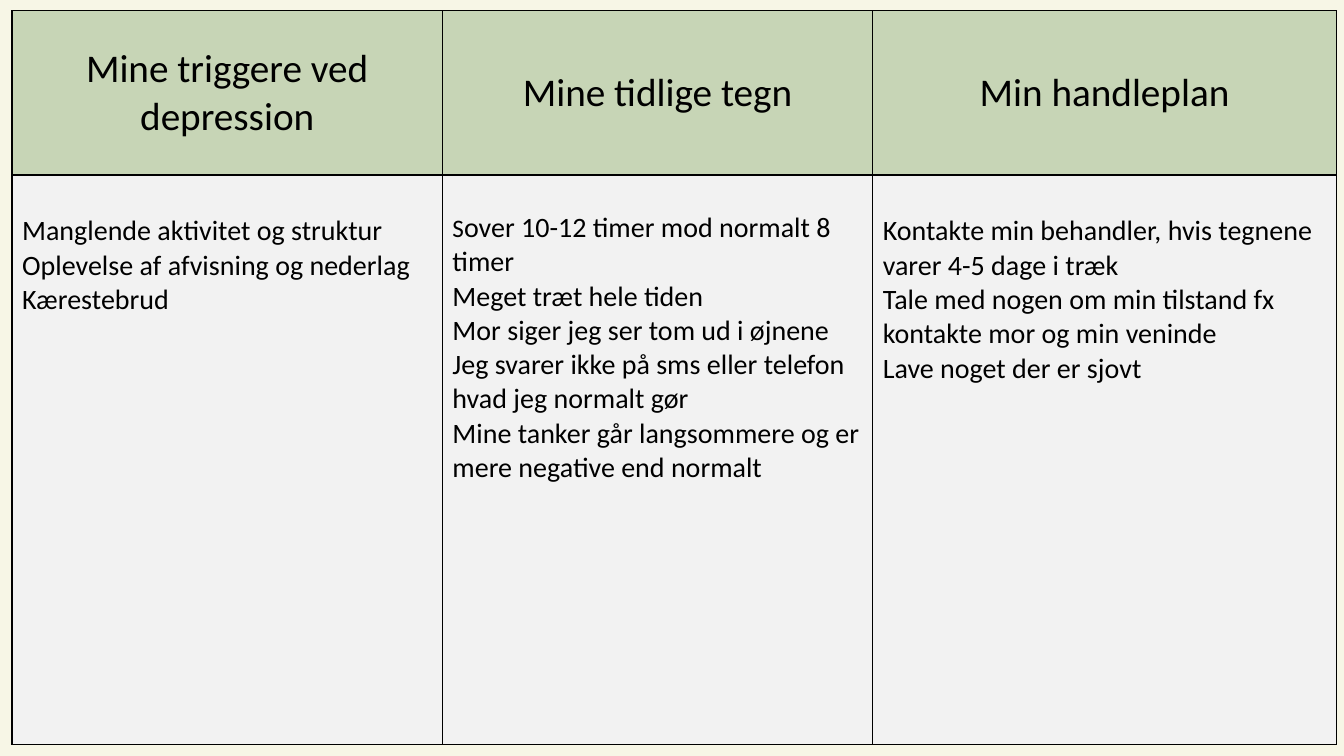
from lxml import etree
from pptx import Presentation
from pptx.dml.color import RGBColor
from pptx.enum.text import MSO_ANCHOR, PP_ALIGN
from pptx.oxml.ns import qn
from pptx.util import Pt

CREAM = RGBColor(0xF7, 0xF6, 0xE6)
GREEN = RGBColor(0xC7, 0xD5, 0xB6)
GRAY = RGBColor(0xF2, 0xF2, 0xF2)
BLACK = RGBColor(0, 0, 0)
TOP, MIDDLE = MSO_ANCHOR.TOP, MSO_ANCHOR.MIDDLE
LEFT, CENTER = PP_ALIGN.LEFT, PP_ALIGN.CENTER

WIDTHS = [307.4, 307.4, 331.2]
HEIGHTS = [117.4, 406.8]
HEADS = ["Mine triggere ved depression", "Mine tidlige tegn", "Min handleplan"]
# Each column: gap above the text, then its lines
PLANS = [
    (28, ["Manglende aktivitet og struktur",
          "Oplevelse af afvisning og nederlag",
          "Kærestebrud"]),
    (25.6, ["Sover 10-12 timer mod normalt 8 timer",
            "Meget træt hele tiden",
            "Mor siger jeg ser tom ud i øjnene",
            "Jeg svarer ikke på sms eller telefon hvad jeg normalt gør",
            "Mine tanker går langsommere og er mere negative end normalt"]),
    (28, ["Kontakte min behandler, hvis tegnene varer 4-5 dage i træk",
          "Tale med nogen om min tilstand fx kontakte mor og min veninde",
          "Lave noget der er sjovt"]),
]


class Sheet:
    font = "Calibri"
    ink = BLACK
    line = 1

    def __init__(self, deck, color):
        self.slide = deck.slides.add_slide(deck.slide_layouts[6])
        fill = self.slide.background.fill
        fill.solid()
        fill.fore_color.rgb = color

    def table(self, left, top, widths, heights):
        frame = self.slide.shapes.add_table(
            len(heights), len(widths), Pt(left), Pt(top),
            Pt(sum(widths)), Pt(sum(heights)))
        grid = frame.table
        grid.first_row = grid.horz_banding = False
        for col, width in zip(grid.columns, widths):
            col.width = Pt(width)
        for row, height in zip(grid.rows, heights):
            row.height = Pt(height)
        return grid

    def cell(self, cell, lines, size, color, align=LEFT, anchor=TOP, gap=3.6):
        self.border(cell)
        cell.fill.solid()
        cell.fill.fore_color.rgb = color
        cell.vertical_anchor = anchor
        cell.margin_top = Pt(gap)
        frame = cell.text_frame
        frame.text = "\n".join(lines)
        for par in frame.paragraphs:
            par.alignment = align
            par.font.name = self.font
            par.font.size = Pt(size)
            par.font.color.rgb = self.ink

    def border(self, cell):
        props = cell._tc.get_or_add_tcPr()
        for side in ("a:lnL", "a:lnR", "a:lnT", "a:lnB"):
            edge = etree.SubElement(props, qn(side), w=str(Pt(self.line)))
            fill = etree.SubElement(edge, qn("a:solidFill"))
            etree.SubElement(fill, qn("a:srgbClr"), val=str(self.ink))


def shrink_first(par, size):
    """Set the first letter of a paragraph in its own size."""
    head = par.runs[0]
    rest = par.add_run()
    rest.text = head.text[1:]
    head.text = head.text[:1]
    head.font.size = Pt(size)


def main():
    deck = Presentation()
    deck.slide_width, deck.slide_height = Pt(960), Pt(540)
    sheet = Sheet(deck, CREAM)
    grid = sheet.table(8.6, 7.6, WIDTHS, HEIGHTS)
    for col, (head, (gap, lines)) in enumerate(zip(HEADS, PLANS)):
        sheet.cell(grid.cell(0, col), [head], 28, GREEN, CENTER, MIDDLE)
        sheet.cell(grid.cell(1, col), lines, 20, GRAY, gap=gap)
    shrink_first(grid.cell(1, 1).text_frame.paragraphs[0], 18)
    deck.save("out.pptx")


if __name__ == "__main__":
    main()
